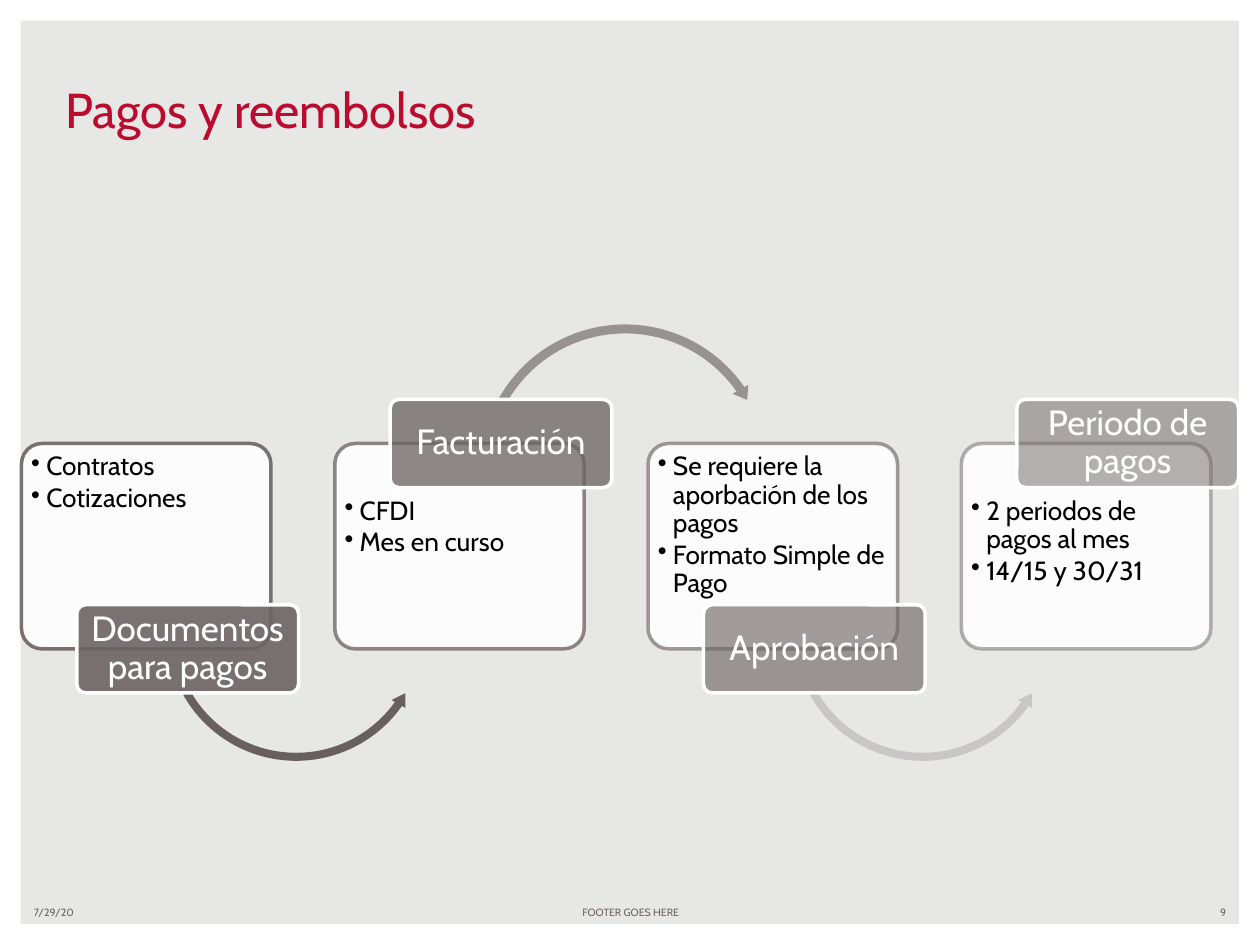
from lxml import etree
from pptx import Presentation
from pptx.dml.color import RGBColor
from pptx.enum.shapes import MSO_SHAPE
from pptx.enum.text import MSO_ANCHOR, PP_ALIGN
from pptx.oxml.ns import qn
from pptx.util import Inches, Pt

LEFT, CENTER, RIGHT = PP_ALIGN.LEFT, PP_ALIGN.CENTER, PP_ALIGN.RIGHT
TOP, MIDDLE, BOTTOM = MSO_ANCHOR.TOP, MSO_ANCHOR.MIDDLE, MSO_ANCHOR.BOTTOM
FRAME, ROUNDED = MSO_SHAPE.FRAME, MSO_SHAPE.ROUNDED_RECTANGLE

TITLE = "Pagos y reembolsos"
# label, bullets, opacity of the step colour, colour of the arrow to the next step
STEPS = [
    ("Documentos para pagos", ["Contratos", "Cotizaciones"], 90, "67605F"),
    ("Facturación", ["CFDI", "Mes en curso"], 77, "989292"),
    ("Aprobación", ["Se requiere la aporbación de los pagos",
                    "Formato Simple de Pago"], 63, "C8C6C6"),
    ("Periodo de pagos", ["2 periodos de pagos al mes", "14/15 y 30/31"], 50, None),
]
# text, left, width, alignment
FOOTER = [
    ("7/29/20", 0.17, 2.33, LEFT),
    ("FOOTER GOES HERE", 3.42, 3.17, CENTER),
    ("9", 7.5, 2.33, RIGHT),
]

THEME = {
    "font": "Cabin", "background": "E7E7E5", "white": "FFFFFF", "step": "6C6463",
    "title": {"size": 28, "color": "BA0C2F"},
    "label": {"size": 20, "color": "FFFFFF"},
    "bullet": {"size": 15, "color": "000000"},
    "footer": {"size": 6, "color": "6C6463"},
}

FIRST_LEFT, LAST_LEFT = 0.17, 7.63
CARD_TOP, CARD_W, CARD_H = 3.52, 1.98, 1.63
LABEL_DX, LABEL_W, LABEL_H = 0.44, 1.76, 0.7
ARROW_DX = 1.12
# Where label and arrow go, for labels below and above their card
BELOW = {"label_top": 4.8, "text_top": 0.03, "arrow": MSO_SHAPE.LEFT_CIRCULAR_ARROW,
         "arrow_top": 3.95, "arrow_size": 2.12,
         "adjust": (0.03, 3.48, 21.23, 90.24, 0.03)}
ABOVE = {"label_top": 3.17, "text_top": 0.38, "arrow": MSO_SHAPE.CIRCULAR_ARROW,
         "arrow_top": 2.54, "arrow_size": 2.37,
         "adjust": (0.03, 3.08, 195.16, 125.76, 0.03)}


def paint(fill, color, opacity=100):
    fill.solid()
    fill.fore_color.rgb = RGBColor.from_string(color)
    if opacity < 100:
        clr = fill._xPr.find(qn("a:solidFill"))[0]
        etree.SubElement(clr, qn("a:alpha"), val=str(opacity * 1000))


def add_shape(slide, kind, box, color, opacity=100, line=None, line_opacity=100,
              adjust=()):
    sp = slide.shapes.add_shape(kind, *map(Inches, box))
    sp.shadow.inherit = False
    for i, value in enumerate(adjust):
        sp.adjustments[i] = value
    paint(sp.fill, color, opacity)
    if line:
        sp.line.width = Pt(2)
        paint(sp.line.fill, line, line_opacity)
    else:
        sp.line.fill.background()
    return sp


def write(sp, lines, style, align=LEFT, anchor=MIDDLE, insets=(0.1, 0.05, 0.1, 0.05),
          **spacing):
    """Fill a text frame; insets run left, top, right, bottom."""
    tf = sp.text_frame
    tf.word_wrap = True
    tf.vertical_anchor = anchor
    for side, inset in zip(("left", "top", "right", "bottom"), insets):
        setattr(tf, f"margin_{side}", Inches(inset))
    for i, line in enumerate(lines):
        p = tf.add_paragraph() if i else tf.paragraphs[0]
        p.alignment = align
        for name, value in spacing.items():
            setattr(p, name, value)
        r = p.add_run()
        r.text = line
        r.font.name = THEME["font"]
        r.font.size = Pt(style["size"])
        r.font.color.rgb = RGBColor.from_string(style["color"])


def add_bullets(tf):
    for p in tf.paragraphs:
        pPr = p._p.get_or_add_pPr()
        pPr.set("marL", str(Inches(0.12)))
        pPr.set("indent", str(-Inches(0.12)))
        etree.SubElement(pPr, qn("a:buChar"), char="•")


def add_step(slide, left, side, label, bullets, opacity, arrow_color):
    card = add_shape(slide, ROUNDED, (left, CARD_TOP, CARD_W, CARD_H), THEME["white"], 90,
                     THEME["step"], opacity, (0.1,))
    write(card, bullets, THEME["bullet"], anchor=TOP,
          insets=(0.03, side["text_top"], 0.03, 0.03), line_spacing=0.9, space_after=Pt(2))
    add_bullets(card.text_frame)
    if arrow_color:
        size = side["arrow_size"]
        add_shape(slide, side["arrow"], (left + ARROW_DX, side["arrow_top"], size, size),
                  arrow_color, adjust=side["adjust"])
    tag = add_shape(slide, ROUNDED, (left + LABEL_DX, side["label_top"], LABEL_W, LABEL_H),
                    THEME["step"], opacity, THEME["white"], adjust=(0.1,))
    write(tag, [label], THEME["label"], CENTER, insets=(0.04, 0.03, 0.04, 0.03),
          line_spacing=0.9)


def main():
    prs = Presentation()
    prs.slide_width, prs.slide_height = Inches(10), Inches(7.5)
    s = prs.slides.add_slide(prs.slide_layouts[5])
    paint(s.background.fill, THEME["background"])
    add_shape(s, FRAME, (0, 0, 10, 7.5), THEME["white"], adjust=(0.022,))

    title = s.shapes.title
    title.left, title.top, title.width, title.height = map(Inches, (0.42, 0.58, 8.5, 0.57))
    write(title, [TITLE], THEME["title"], anchor=BOTTOM)

    for text, left, width, align in FOOTER:
        box = s.shapes.add_textbox(*map(Inches, (left, 7.14, width, 0.2)))
        write(box, [text], THEME["footer"], align)

    pitch = (LAST_LEFT - FIRST_LEFT) / (len(STEPS) - 1)
    for i, step in enumerate(STEPS):
        add_step(s, FIRST_LEFT + i * pitch, ABOVE if i % 2 else BELOW, *step)

    prs.save("out.pptx")


if __name__ == "__main__":
    main()
